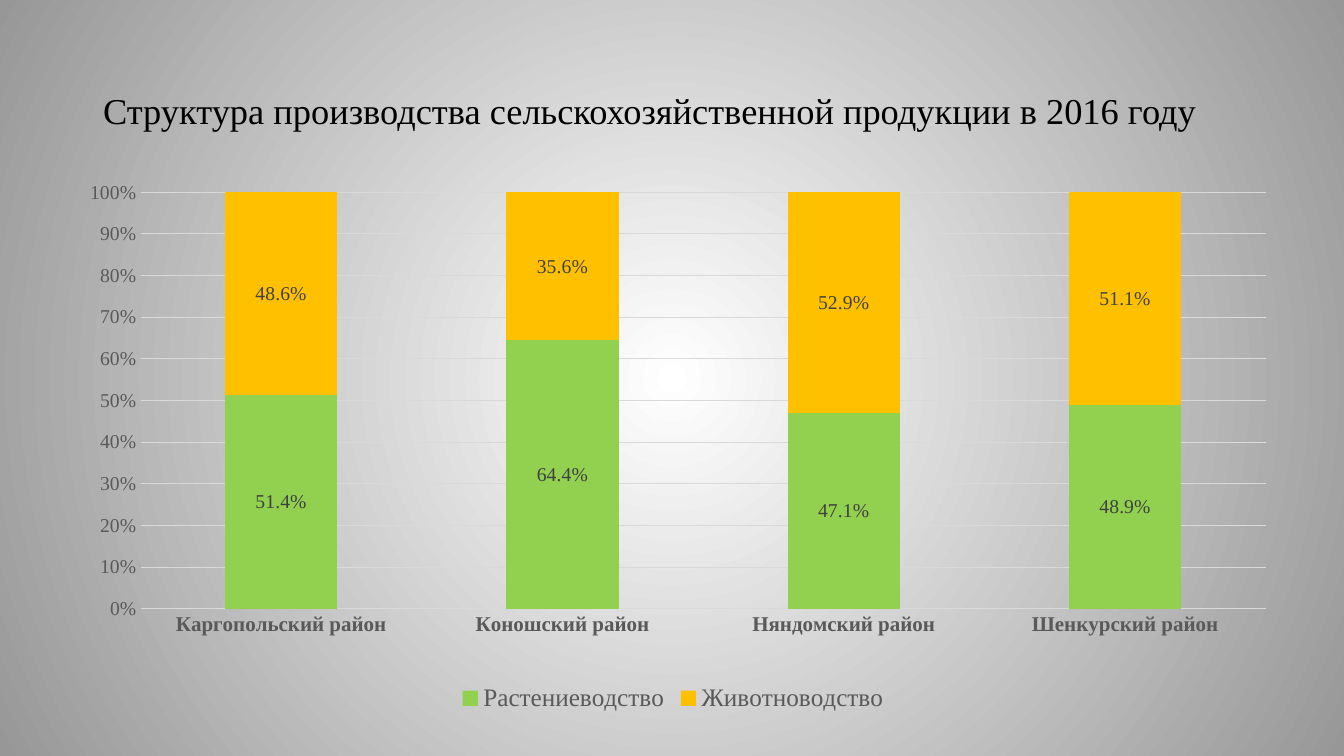
from dataclasses import dataclass

from pptx import Presentation
from pptx import util as u
from pptx.chart import data
from pptx.dml.color import RGBColor
from pptx.enum import chart as ch, text
from pptx.oxml import parse_xml
from pptx.oxml.ns import nsdecls, qn

# Content
TITLE = "Структура производства сельскохозяйственной продукции в 2016 году"
AREAS = ["Каргопольский район", "Коношский район",
         "Няндомский район", "Шенкурский район"]
SERIES = [
    ("Растениеводство", "92D050", (0.514, 0.644, 0.471, 0.489)),
    ("Животноводство", "FFC000", (0.486, 0.356, 0.529, 0.511)),
]


@dataclass(frozen=True)
class Theme:
    face: str = "Times New Roman"
    ink: str = "000000"
    axis: str = "595959"
    label: str = "404040"
    grid: str = "D9D9D9"
    glow: str = "FFFFFF"
    edge: str = "979797"
    head: int = 26
    key: int = 18
    area: int = 15
    small: int = 14


LOOK = Theme()

# Lengths in px: left, top, width, height
SIZE = (1344, 756)
HEAD = (93, 40, 1159, 146)
CHART = (68, 176, 1210, 541)
PLOT = {"x": 0.06, "y": 0.03, "w": 0.93, "h": 0.77}
PX = 12192000 / SIZE[0]


def emu(*px):
    return [u.Emu(round(n * PX)) for n in px]


def style(font, size, color, bold=False):
    font.name, font.size, font.bold = LOOK.face, u.Pt(size), bold
    font.color.rgb = RGBColor.from_string(color)


def rule(line):
    line.color.rgb = RGBColor.from_string(LOOK.grid)
    line.width = u.Pt(0.75)


deck = Presentation()
deck.slide_width, deck.slide_height = emu(*SIZE)
slide = deck.slides.add_slide(deck.slide_layouts[5])

# Radial background
stops = "".join(
    f'<a:gs pos="{pos}"><a:srgbClr val="{color}"/></a:gs>'
    for pos, color in ((0, LOOK.glow), (100000, LOOK.edge)))
slide.element.cSld.insert(0, parse_xml(
    f'<p:bg {nsdecls("p", "a")}><p:bgPr><a:gradFill rotWithShape="1">'
    f'<a:gsLst>{stops}</a:gsLst><a:path path="circle">'
    '<a:fillToRect l="50000" t="50000" r="50000" b="50000"/></a:path>'
    '</a:gradFill><a:effectLst/></p:bgPr></p:bg>'))

# Title
head = slide.shapes.title
head.left, head.top, head.width, head.height = emu(*HEAD)
frame = head.text_frame
frame.text = TITLE
frame.word_wrap = True
frame.auto_size = text.MSO_AUTO_SIZE.NONE
frame.vertical_anchor = text.MSO_ANCHOR.MIDDLE
para = frame.paragraphs[0]
para.alignment = text.PP_ALIGN.LEFT
para.line_spacing = 0.9
style(para.runs[0].font, LOOK.head, LOOK.ink)

# Chart
table = data.CategoryChartData(number_format="0.0%")
table.categories = AREAS
for name, _, vals in SERIES:
    table.add_series(name, vals)
chart = slide.shapes.add_chart(
    ch.XL_CHART_TYPE.COLUMN_STACKED_100, *emu(*CHART), table).chart
chart.has_title = False
style(chart.font, LOOK.small, LOOK.axis)

# Bars and their labels
plot = chart.plots[0]
plot.gap_width, plot.overlap = 150, 100
plot.vary_by_categories = False
for bars, (_, color, _) in zip(plot.series, SERIES):
    bars.format.fill.solid()
    bars.format.fill.fore_color.rgb = RGBColor.from_string(color)
    tags = bars.data_labels
    tags.show_value = True
    tags.number_format, tags.number_format_is_linked = "0.0%", False
    tags.position = ch.XL_LABEL_POSITION.CENTER
    style(tags.font, LOOK.small, LOOK.label)

# Axes
cats, vals = chart.category_axis, chart.value_axis
for axis in (cats, vals):
    axis.major_tick_mark = axis.minor_tick_mark = ch.XL_TICK_MARK.NONE
style(cats.tick_labels.font, LOOK.area, LOOK.axis, True)
rule(cats.format.line)
style(vals.tick_labels.font, LOOK.small, LOOK.axis)
vals.tick_labels.number_format = "0%"
vals.tick_labels.number_format_is_linked = False
vals.minimum_scale, vals.maximum_scale, vals.major_unit = 0, 1, 0.1
vals.format.line.fill.background()
vals.has_major_gridlines = True
rule(vals.major_gridlines.format.line)

# Legend
chart.has_legend = True
chart.legend.position = ch.XL_LEGEND_POSITION.BOTTOM
chart.legend.include_in_layout = False
style(chart.legend.font, LOOK.key, LOOK.axis)

# Fixed inner plot area
area = chart.element.find(".//" + qn("c:plotArea"))
for old in area.findall(qn("c:layout")):
    area.remove(old)
modes = "".join(f'<c:{k}Mode val="edge"/>' for k in "xy")
sides = "".join(f'<c:{k} val="{v}"/>' for k, v in PLOT.items())
area.insert(0, parse_xml(
    f'<c:layout {nsdecls("c")}><c:manualLayout><c:layoutTarget val="inner"/>'
    f'{modes}{sides}</c:manualLayout></c:layout>'))

deck.save("out.pptx")
